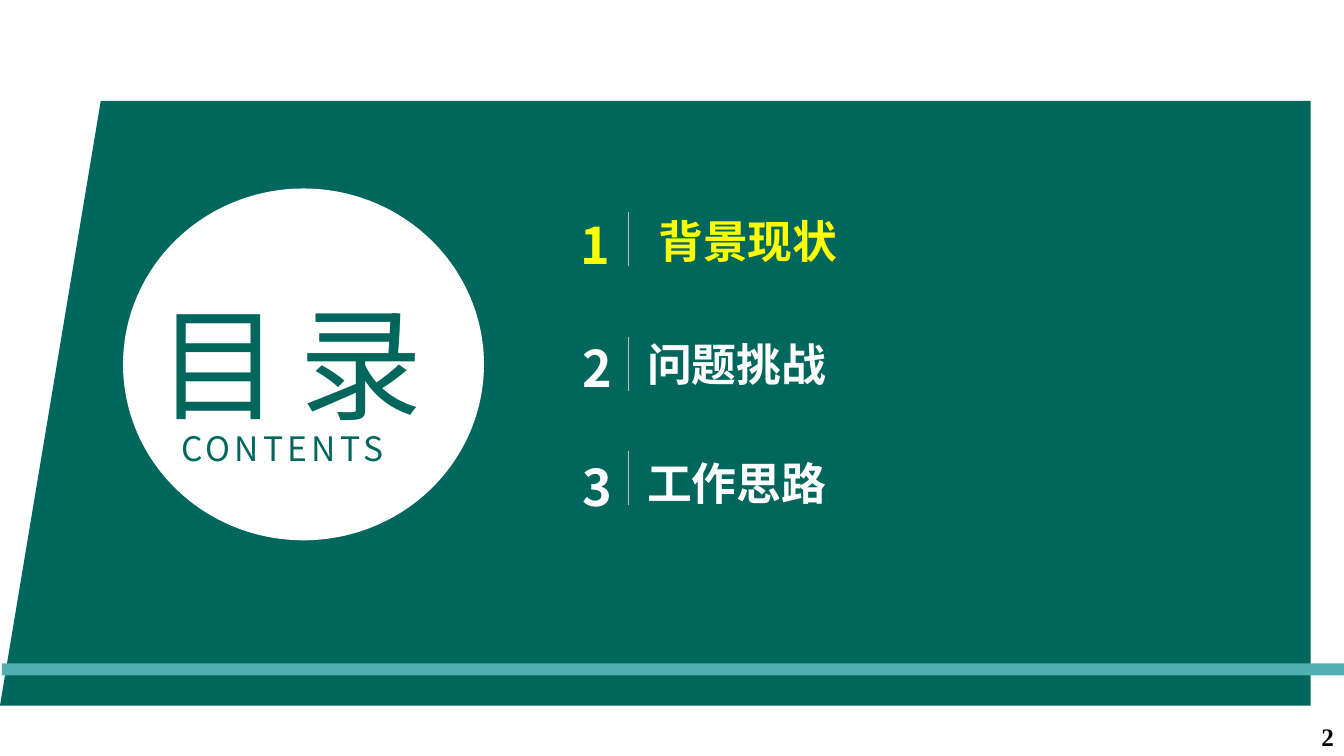
from lxml import etree
from pptx import Presentation
from pptx.dml.color import RGBColor
from pptx.enum.shapes import MSO_CONNECTOR, MSO_SHAPE
from pptx.enum.text import MSO_ANCHOR, MSO_AUTO_SIZE, PP_ALIGN
from pptx.oxml.ns import qn
from pptx.util import Inches, Pt

LEFT, RIGHT = PP_ALIGN.LEFT, PP_ALIGN.RIGHT
MIDDLE = MSO_ANCHOR.MIDDLE
NO_AUTOFIT = MSO_AUTO_SIZE.NONE
STRAIGHT = MSO_CONNECTOR.STRAIGHT
RECTANGLE, OVAL = MSO_SHAPE.RECTANGLE, MSO_SHAPE.OVAL

GREEN = RGBColor(0x01, 0x67, 0x5C)
TEAL = RGBColor(0x50, 0xB0, 0xB0)
WHITE = RGBColor(0xFF, 0xFF, 0xFF)
YELLOW = RGBColor(0xFF, 0xFF, 0x00)
GRAY = RGBColor(0xBF, 0xBF, 0xBF)
BLACK = RGBColor(0, 0, 0)
SANS, SERIF = "Noto Sans CJK SC", "Times New Roman"

# Content
TITLE, SUBTITLE, PAGE = "目录", "CONTENTS", "2"
# Number, label, colour, row top, number left, divider top, label left
CHAPTERS = [
    ("1", "背景现状", YELLOW, 2.07, 5.66, 2.1, 6.43),
    ("2", "问题挑战", WHITE, 3.29, 5.68, 3.34, 6.32),
    ("3", "工作思路", WHITE, 4.47, 5.68, 4.47, 6.32),
]

# Layout in inches
WIDTH, HEIGHT = 13.33, 7.5
PANEL = [(0.02, 6.83), (1.38, 0.82), (13.35, 0.8), (13.35, 6.93)]
DIVIDER_X, DIVIDER_LENGTH = 6.23, 0.54

presentation = Presentation()
presentation.slide_width = Inches(WIDTH)
presentation.slide_height = Inches(HEIGHT)
slide = presentation.slides.add_slide(presentation.slide_layouts[5])
shapes = slide.shapes


def write(text, box, holder=None, size=32, color=WHITE, font=SANS,
          bold=False, align=LEFT, wrap=True, spacing=0):
    """Put one formatted line in a placeholder or a new text box."""
    left, top, width, height = map(Inches, box)
    if holder is None:
        holder = shapes.add_textbox(left, top, width, height)
    else:
        holder.left, holder.top, holder.width, holder.height = left, top, width, height
    frame = holder.text_frame
    frame.auto_size = NO_AUTOFIT
    frame.word_wrap = wrap
    frame.vertical_anchor = MIDDLE
    paragraph = frame.paragraphs[0]
    paragraph.alignment = align
    run = paragraph.add_run()
    run.text = text
    run.font.size, run.font.bold, run.font.name = Pt(size), bold, font
    run.font.color.rgb = color
    properties = run._r.get_or_add_rPr()
    etree.SubElement(properties, qn("a:ea")).set("typeface", font)
    if spacing:
        properties.set("spc", str(spacing * 100))


def paint(shape, color):
    shape.shadow.inherit = False
    shape.fill.solid()
    shape.fill.fore_color.rgb = color
    shape.line.fill.background()


# Green panel, white disc and teal stripe
builder = shapes.build_freeform(*PANEL[0], scale=Inches(1))
builder.add_line_segments(PANEL[1:], close=True)
paint(builder.convert_to_shape(), GREEN)
for kind, box, color in [(OVAL, (1.22, 1.87, 3.58, 3.49), WHITE),
                         (RECTANGLE, (0.02, 6.58, WIDTH, 0.12), TEAL)]:
    paint(shapes.add_shape(kind, *map(Inches, box)), color)

# Title, brought in front of the disc
title = shapes.title
shapes._spTree.append(title._element)
write(TITLE, (1.46, 2.65, 3.1, 1.87), holder=title, size=88, color=GREEN,
      wrap=False, spacing=14)
write(SUBTITLE, (1.7, 4.15, 2.36, 0.59), size=24, color=GREEN, wrap=False, spacing=3)

# Chapters
for number, label, color, top, number_left, divider_top, label_left in CHAPTERS:
    write(number, (number_left, top, 0.9, 0.71), size=36, color=color, bold=True)
    write(label, (label_left, top, 4.62, 0.64), color=color, bold=True)
    divider = shapes.add_connector(
        STRAIGHT, Inches(DIVIDER_X), Inches(divider_top),
        Inches(DIVIDER_X), Inches(divider_top + DIVIDER_LENGTH))
    divider.line.color.rgb = GRAY
    divider.line.width = Pt(0.5)
    etree.SubElement(divider._element.spPr, qn("a:effectLst"))

# Page number
write(PAGE, (WIDTH - 3, 7.11, 3, 0.4), size=18, color=BLACK, font=SERIF,
      bold=True, align=RIGHT)

presentation.save("out.pptx")
